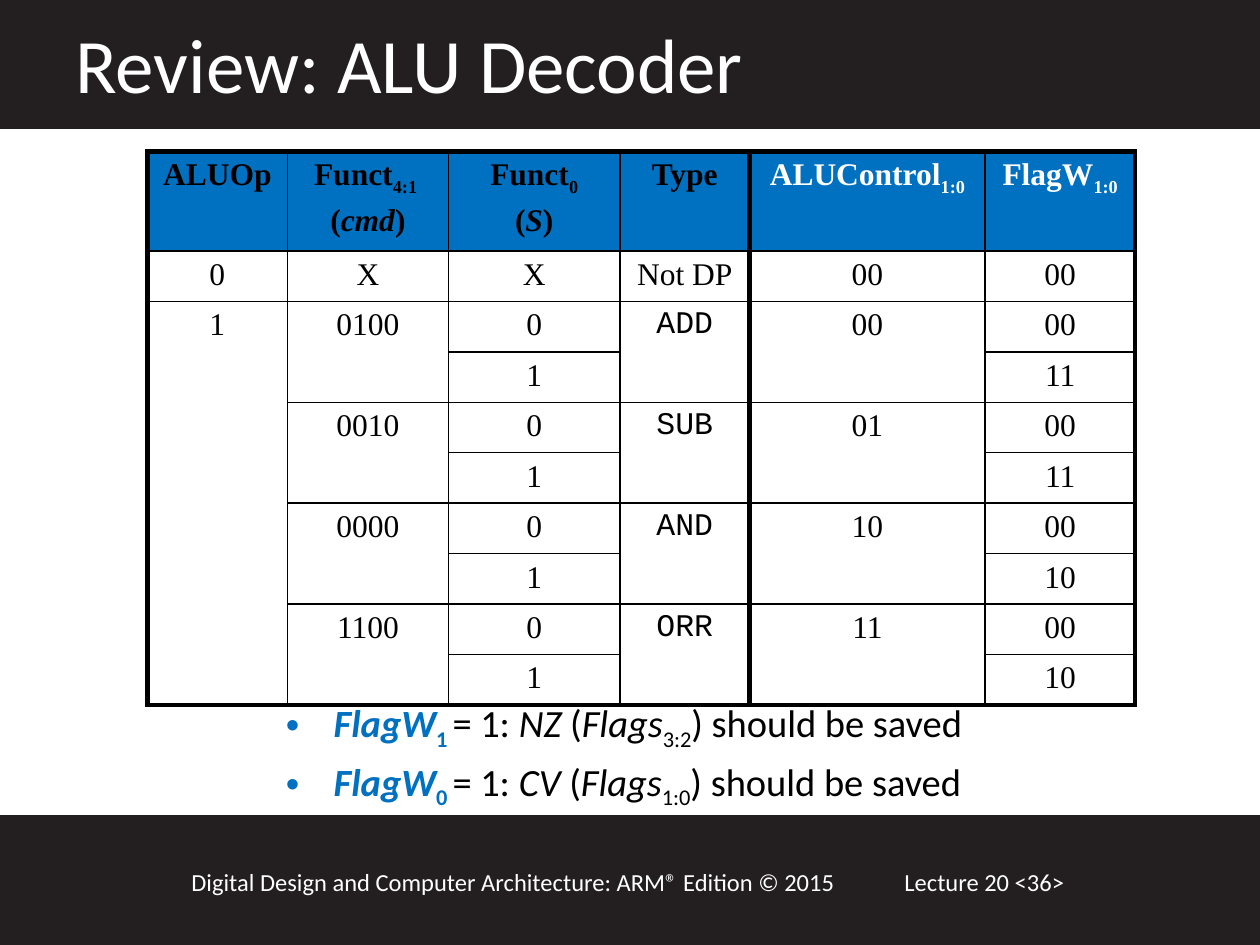
from dataclasses import dataclass
from lxml import etree
from pptx import Presentation
from pptx import util as u
from pptx.dml.color import RGBColor as Rgb
from pptx.enum import shapes, text
from pptx.oxml.ns import qn

W, H = 10, 7.5


@dataclass(frozen=True)
class Theme:
    dark: str = "231F20"
    blue: str = "0070C0"
    white: str = "FFFFFF"
    black: str = "000000"
    sans: str = "Calibri"
    serif: str = "Times New Roman"
    mono: str = "Courier New"
    title: int = 44
    body: int = 22
    cell: int = 18
    foot: int = 14
    thick: int = 3
    thin: int = 1


T = Theme()


def rgb(tone):
    return Rgb.from_string(tone)


def span(box):
    """Turn shares of the slide's size into lengths."""
    return [u.Inches(part * size) for part, size in zip(box, (W, H, W, H))]


def write(para, runs, face, size, tone):
    """Each run is (words, marks[, colour]); marks: b bold, i italic, _ lowered."""
    for words, marks, *own in runs:
        run = para.add_run()
        run.text = words
        font = run.font
        font.name, font.size = face, u.Pt(size)
        font.bold, font.italic = "b" in marks, "i" in marks
        font.color.rgb = rgb(own[0] if own else tone)
        if "_" in marks:
            run._r.get_or_add_rPr().set("baseline", "-25000")


def hang(para, left):
    """Hanging first line."""
    props = para._p.get_or_add_pPr()
    props.set("marL", str(u.Inches(left)))
    props.set("indent", str(u.Inches(-0.38)))
    return props


def frame(slide, box):
    body = slide.shapes.add_textbox(*span(box)).text_frame
    body.word_wrap = True
    body.auto_size = text.MSO_AUTO_SIZE.SHAPE_TO_FIT_TEXT
    return body


def label(slide, box, words, size):
    para = frame(slide, box).paragraphs[0]
    write(para, [(words, "")], T.sans, size, T.white)


def band(slide, box):
    bar = slide.shapes.add_shape(shapes.MSO_SHAPE.RECTANGLE, *span(box))
    bar.shadow.inherit = False
    bar.fill.solid()
    bar.fill.fore_color.rgb = rgb(T.dark)
    bar.line.color.rgb = rgb(T.dark)
    bar.line.width = u.Pt(2)


def header(slide, box):
    band(slide, box)
    label(slide, (0.05, 0.011, 0.867, 0.112), "Review: ALU Decoder", T.title)


def footer(slide, box):
    band(slide, box)
    top = box[1] + 0.047
    label(slide, (0.708, top, 0.217, 0.045), "Lecture 20 <36>", T.foot)
    label(slide, (0.142, top, 0.575, 0.045),
          "Digital Design and Computer Architecture: ARM® Edition © 2015", T.foot)


def edge(cell, sides):
    """Draw left, right, top and bottom lines; width 0 hides a line."""
    props = cell._tc.get_or_add_tcPr()
    for at, (side, width) in enumerate(zip("LRTB", sides)):
        line = etree.Element(qn(f"a:ln{side}"), w=str(u.Pt(width)))
        if width:
            fill = etree.SubElement(line, qn("a:solidFill"))
            etree.SubElement(fill, qn("a:srgbClr"), val=T.black)
        else:
            etree.SubElement(line, qn("a:noFill"))
        props.insert(at, line)


def fill_cell(cell, lines, face, tone, blue):
    if blue:
        cell.fill.solid()
        cell.fill.fore_color.rgb = rgb(T.blue)
    else:
        cell.fill.background()
    body = cell.text_frame
    for at, runs in enumerate(lines):
        para = body.add_paragraph() if at else body.paragraphs[0]
        hang(para, 0.38)
        para.alignment = text.PP_ALIGN.CENTER
        if at:
            para.space_before = u.Pt(3.6)
        write(para, runs, face, T.cell, tone)


HEADS = [
    [[("ALUOp", "b")]],
    [[("Funct", "b"), ("4:1 ", "b_")], [("(", "b"), ("cmd", "bi"), (")", "b")]],
    [[("Funct", "b"), ("0", "b_")], [("(", "b"), ("S", "bi"), (")", "b")]],
    [[("Type", "b")]],
    [[("ALUControl", "b"), ("1:0", "b_")]],
    [[("FlagW", "b"), ("1:0", "b_")]],
]
# Command code, name, control bits, flag bits when S is 1
CODES = [("0100", "ADD", "00", "11"), ("0010", "SUB", "01", "11"),
         ("0000", "AND", "10", "10"), ("1100", "ORR", "11", "10")]


def entries():
    """Yield row, column, rows spanned and lines of every cell."""
    for col, lines in enumerate(HEADS):
        yield 0, col, 1, lines
    plain = [(1, col, 1, word) for col, word in
             enumerate(["0", "X", "X", "Not DP", "00", "00"])]
    plain.append((2, 0, 8, "1"))
    for at, (code, name, ctrl, flag) in enumerate(CODES):
        row = 2 + 2 * at
        plain += [(row, 1, 2, code), (row, 3, 2, name), (row, 4, 2, ctrl),
                  (row, 2, 1, "0"), (row + 1, 2, 1, "1"),
                  (row, 5, 1, "00"), (row + 1, 5, 1, flag)]
    for row, col, tall, word in plain:
        yield row, col, tall, [[(word, "")]]


def decoder(slide, box):
    cols = [1.11, 1.28, 1.36, 1.03, 1.87, 1.19]
    rows = [0.75] + [0.4] * 9
    grid = slide.shapes.add_table(len(rows), len(cols), *span(box)).table
    grid.first_row = grid.horz_banding = False
    for col, wide in zip(grid.columns, cols):
        col.width = u.Inches(wide)
    for row, high in zip(grid.rows, rows):
        row.height = u.Inches(high)

    def rule(heavy):
        return T.thick if heavy else T.thin

    for row, col, tall, lines in entries():
        last = row + tall - 1
        cell = grid.cell(row, col)
        if tall > 1:
            cell.merge(grid.cell(last, col))
        face = T.mono if col == 3 and row > 1 else T.serif
        tone = T.white if row == 0 and col > 3 else T.black
        fill_cell(cell, lines, face, tone, row == 0)
        # Heavy outer frame, and a heavy line between inputs and outputs
        left, right = rule(col in (0, 4)), rule(col in (3, 5))
        low = rule(last == len(rows) - 1)
        edge(cell, (left, right, rule(row == 0), low))
        for down in range(row + 1, last + 1):
            part = grid.cell(down, col)
            part.fill.background()
            edge(part, (left, right, 0, low if down == last else 0))


def notes(slide, box):
    body = frame(slide, box)
    for at, (bit, pair, bits) in enumerate([("1", "NZ", "3:2"), ("0", "CV", "1:0")]):
        para = body.add_paragraph() if at else body.paragraphs[0]
        para.level = 1
        props = hang(para, 0.88)
        etree.SubElement(props, qn("a:buFont"), typeface="Arial")
        etree.SubElement(props, qn("a:buChar"), char="•")
        if at:
            para.space_before = u.Pt(3.5)
        write(para, [("FlagW", "bi", T.blue), (bit + " ", "b_", T.blue),
                     ("= 1: ", ""), (pair, "i"), (" (", ""), ("Flags", "i"),
                     (bits, "_"), (") should be saved", "")],
              T.sans, T.body, T.black)


def main():
    deck = Presentation()
    deck.slide_width, deck.slide_height = u.Inches(W), u.Inches(H)
    slide = deck.slides.add_slide(deck.slide_layouts[6])
    footer(slide, (0, 0.864, 1, 0.136))
    header(slide, (0, 0, 1, 0.135))
    decoder(slide, (0.117, 0.16, 0.783, 0.58))
    notes(slide, (0.167, 0.733, 0.692, 0.161))
    deck.save("out.pptx")


if __name__ == "__main__":
    main()
